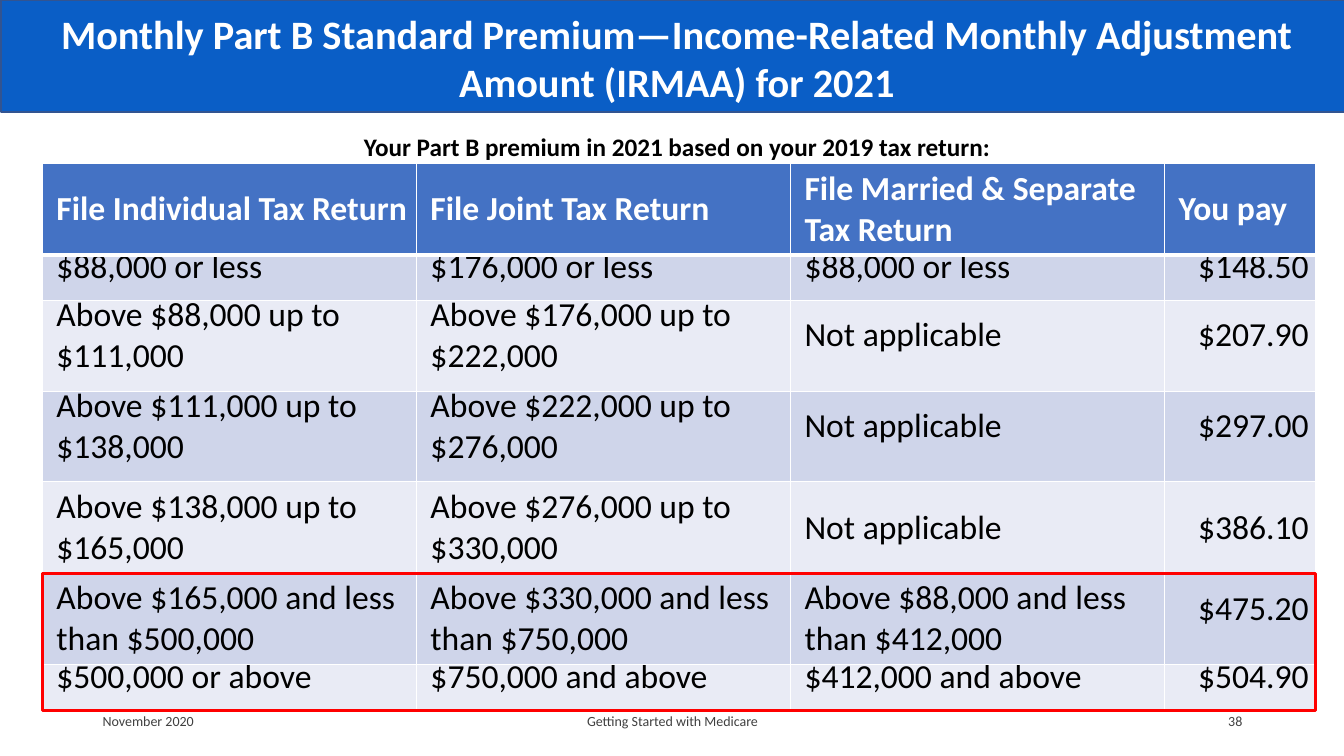
from lxml import etree
from pptx import Presentation
from pptx.dml.color import RGBColor
from pptx.enum.shapes import MSO_SHAPE
from pptx.enum.text import MSO_ANCHOR, PP_ALIGN
from pptx.oxml.ns import qn
from pptx.util import Inches, Pt

LEFT, CENTER, RIGHT = PP_ALIGN.LEFT, PP_ALIGN.CENTER, PP_ALIGN.RIGHT
TOP, MIDDLE = MSO_ANCHOR.TOP, MSO_ANCHOR.MIDDLE
RECTANGLE = MSO_SHAPE.RECTANGLE

FONT = "Calibri"
COLORS = {
    "white": "FFFFFF",
    "black": "000000",
    "footer": "404040",
    "banner": "0A5EC6",
    "banner_line": "325491",
    "header": "4472C4",
    "odd_row": "CFD5EA",
    "even_row": "E9EBF5",
    "highlight": "FF0000",
}

COLUMN_WIDTHS = [3.71, 3.71, 3.71, 1.5]
ROW_HEIGHTS = [0.91, 0.45, 0.9, 0.9, 0.91, 0.9, 0.46]
HIGHLIGHTED_ROWS = 2
HEADERS = ["File Individual Tax Return", "File Joint Tax Return",
           "File Married & Separate Tax Return", "You pay"]
BRACKETS = [
    ["$88,000 or less", "$176,000 or less", "$88,000 or less", "$148.50"],
    ["Above $88,000 up to\n$111,000", "Above $176,000 up to\n$222,000", "Not applicable", "$207.90"],
    ["Above $111,000 up to\n$138,000", "Above $222,000 up to\n$276,000", "Not applicable", "$297.00"],
    ["Above $138,000 up to\n$165,000", "Above $276,000 up to\n$330,000", "Not applicable", "$386.10"],
    ["Above $165,000 and less than $500,000", "Above $330,000 and less than $750,000",
     "Above $88,000 and less than $412,000", "$475.20"],
    ["$500,000 or above", "$750,000 and above", "$412,000 and above", "$504.90"],
]
PRICE_COLUMN = 3
TIGHT_LINE = Pt(14.6)
LOOSE_ROW, WRAPPED_ROW = 4, 5


def rgb(name):
    return RGBColor.from_string(COLORS[name])


def write(frame, text, size, color, bold=False, align=LEFT):
    """Fill a text frame, one paragraph for each line of text."""
    for index, line in enumerate(text.split("\n")):
        paragraph = frame.add_paragraph() if index else frame.paragraphs[0]
        paragraph.alignment = align
        run = paragraph.add_run()
        run.text = line
        run.font.name = FONT
        run.font.size = Pt(size)
        run.font.bold = bold
        run.font.color.rgb = rgb(color)


def add_text(slide, box, text, size, color, bold=False, align=LEFT, anchor=MIDDLE):
    frame = slide.shapes.add_textbox(*map(Inches, box)).text_frame
    frame.word_wrap = True
    frame.vertical_anchor = anchor
    write(frame, text, size, color, bold, align)
    return frame


def add_rectangle(slide, box, line, line_width, fill=None):
    shape = slide.shapes.add_shape(RECTANGLE, *map(Inches, box))
    shape.shadow.inherit = False
    if fill:
        shape.fill.solid()
        shape.fill.fore_color.rgb = rgb(fill)
    else:
        shape.fill.background()
    shape.line.color.rgb = rgb(line)
    shape.line.width = Pt(line_width)


def add_banner(slide, box):
    left, top, width, height = box
    add_rectangle(slide, box, "banner_line", 1, "banner")
    add_text(slide, (left + 0.37, top + 0.01, width - 0.66, height + 0.01),
             "Monthly Part B Standard Premium—Income-Related Monthly Adjustment "
             "Amount (IRMAA) for 2021", 28.8, "white", True, CENTER)


def add_caption(slide, box):
    frame = add_text(slide, box, "Your Part B premium in 2021 based on your 2019 tax return:",
                     18, "black", True, anchor=TOP)
    frame.margin_left = Inches(0.34)
    frame.paragraphs[0].space_after = Pt(0.5)


def set_borders(cell, top, bottom):
    """Draw white cell borders; top and bottom are widths in points."""
    properties = cell._tc.get_or_add_tcPr()
    for tag, width in (("a:lnL", 1), ("a:lnR", 1), ("a:lnT", top), ("a:lnB", bottom)):
        line = etree.SubElement(properties, qn(tag), w=str(Pt(width)))
        fill = etree.SubElement(line, qn("a:solidFill"))
        etree.SubElement(fill, qn("a:srgbClr"), val=COLORS["white"])


def fill_cell(cell, text, row, column):
    is_header = row == 0
    is_price = column == PRICE_COLUMN and not is_header
    set_borders(cell, 3 if row == 1 else 1, 3 if is_header else 1)
    cell.fill.solid()
    cell.fill.fore_color.rgb = rgb("header" if is_header else "odd_row" if row % 2 else "even_row")
    cell.vertical_anchor = MIDDLE
    cell.margin_top = cell.margin_bottom = 0
    cell.margin_left = Inches(0 if is_price else 0.14)
    cell.margin_right = Inches(0.07 if is_price else 0)
    write(cell.text_frame, text, 24, "white" if is_header else "black", is_header,
          RIGHT if is_price else LEFT)
    first = cell.text_frame.paragraphs[0]
    if is_header or row == LOOSE_ROW:
        first.space_before = Pt(0.1)
    elif row != WRAPPED_ROW or is_price:
        first.line_spacing = TIGHT_LINE


def add_premium_table(slide, box):
    left, top, width, height = box
    rows = [HEADERS] + BRACKETS
    table = slide.shapes.add_table(len(rows), len(HEADERS), *map(Inches, box)).table
    table.horz_banding = False
    for column, column_width in zip(table.columns, COLUMN_WIDTHS):
        column.width = Inches(column_width)
    for row, row_height in zip(table.rows, ROW_HEIGHTS):
        row.height = Inches(row_height)
    for row, texts in enumerate(rows):
        for column, text in enumerate(texts):
            fill_cell(table.cell(row, column), text, row, column)
    frame_height = sum(ROW_HEIGHTS[-HIGHLIGHTED_ROWS:])
    add_rectangle(slide, (left, top + height - frame_height, width, frame_height),
                  "highlight", 2.25)


def add_footer(slide, box):
    left, top, width, height = box
    for offset, part_width, text, align in (
            (0, 3, "November 2020", LEFT),
            (3.5, 4.5, "Getting Started with Medicare", CENTER),
            (width - 3, 3, "38", RIGHT)):
        add_text(slide, (left + offset, top, part_width, height), text, 10, "footer", align=align)


def main():
    presentation = Presentation()
    presentation.slide_width = Inches(13.33)
    presentation.slide_height = Inches(7.5)
    slide = presentation.slides.add_slide(presentation.slide_layouts[6])
    add_banner(slide, (0.01, 0, 13.33, 1.11))
    add_caption(slide, (3.27, 1.25, 6.74, 0.4))
    add_premium_table(slide, (0.42, 1.62, sum(COLUMN_WIDTHS), sum(ROW_HEIGHTS)))
    add_footer(slide, (0.92, 6.95, 11.5, 0.4))
    presentation.save("out.pptx")


if __name__ == "__main__":
    main()
